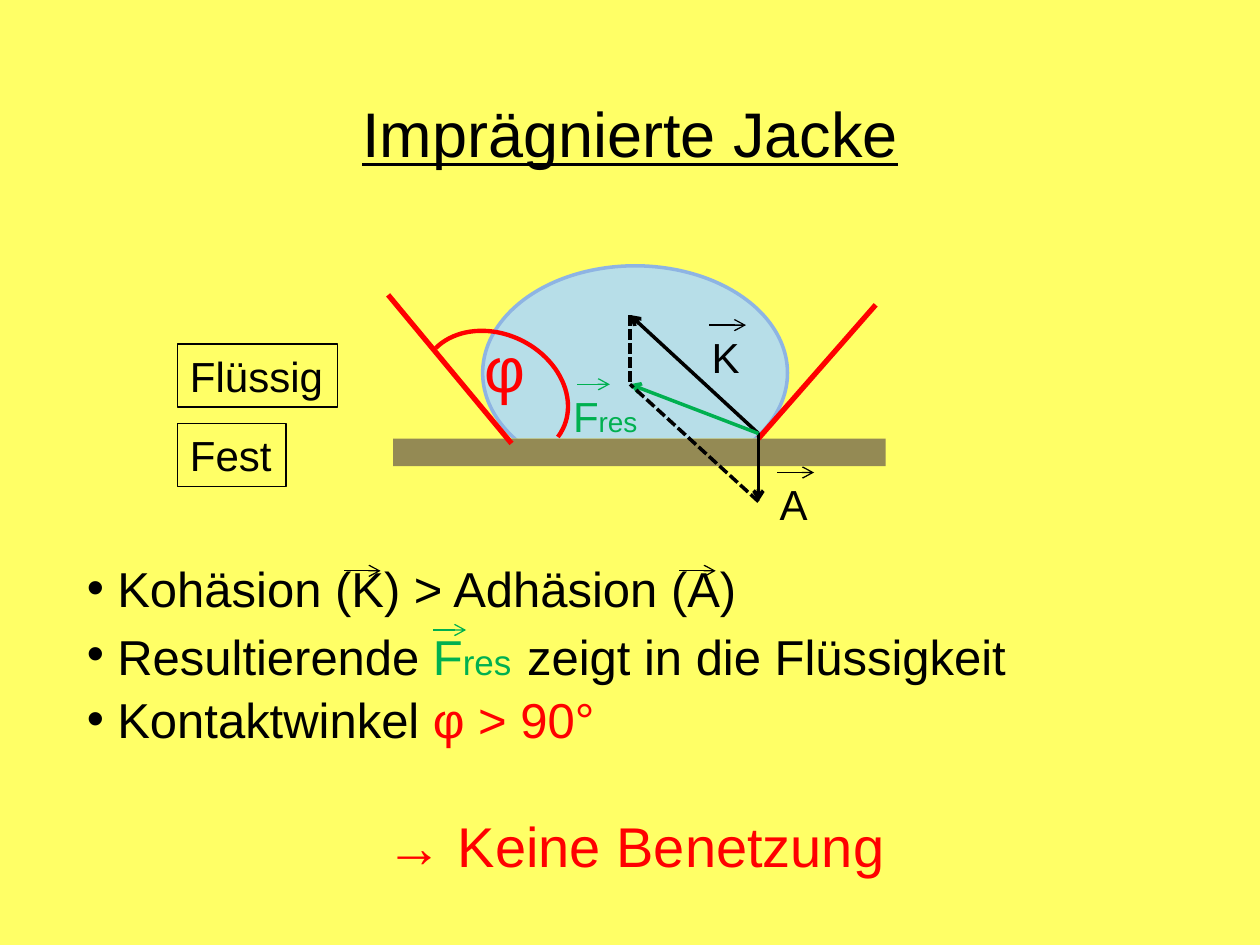
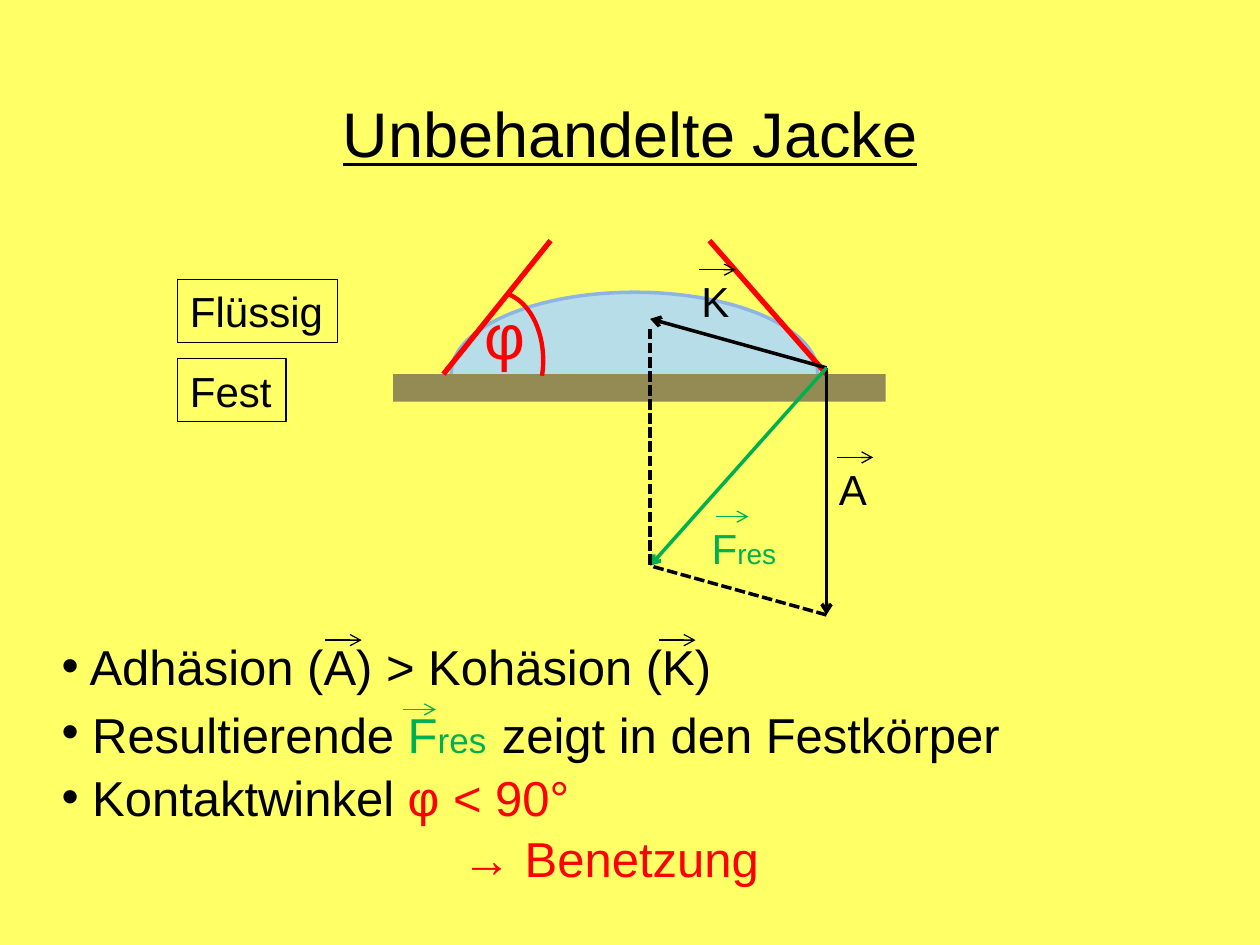
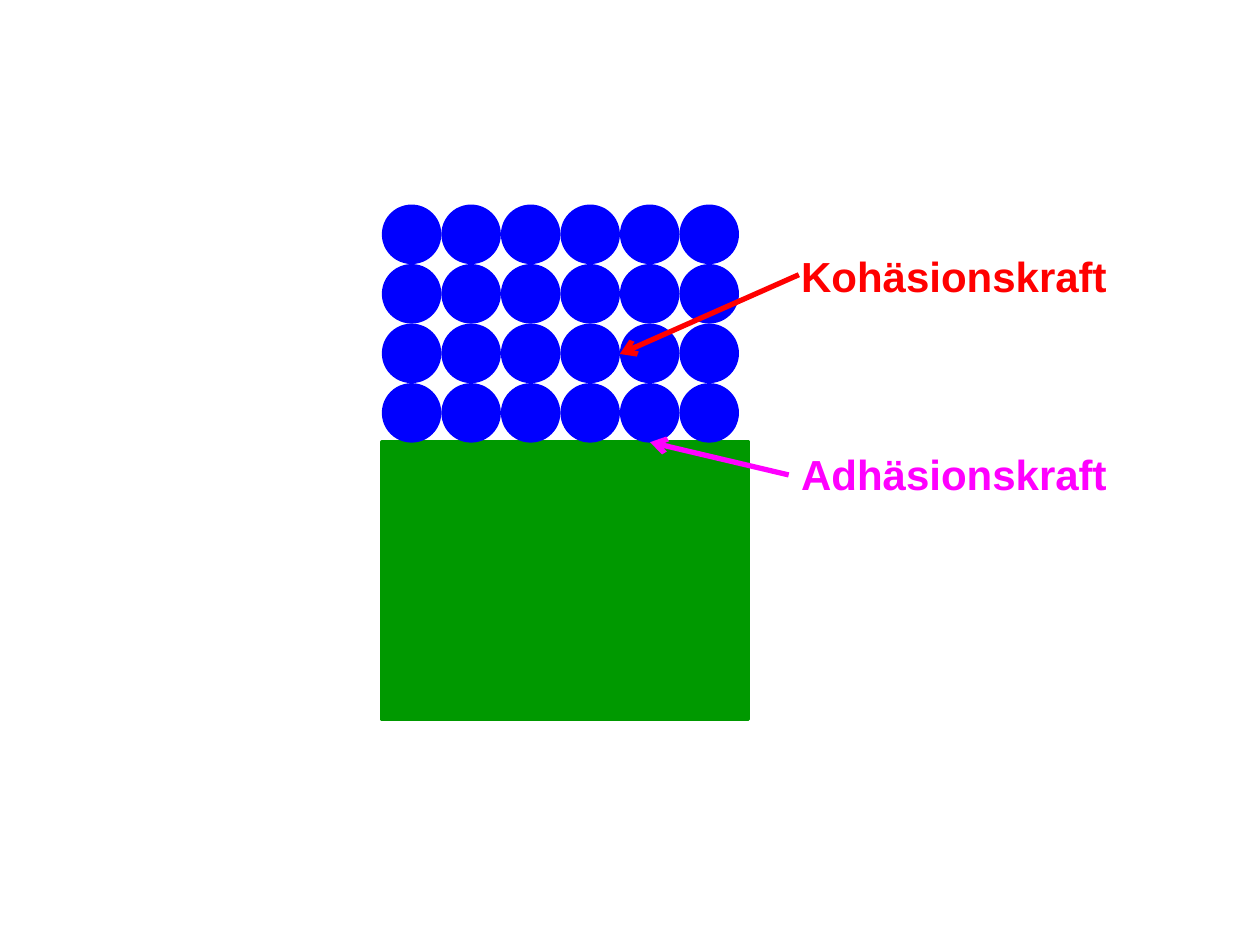
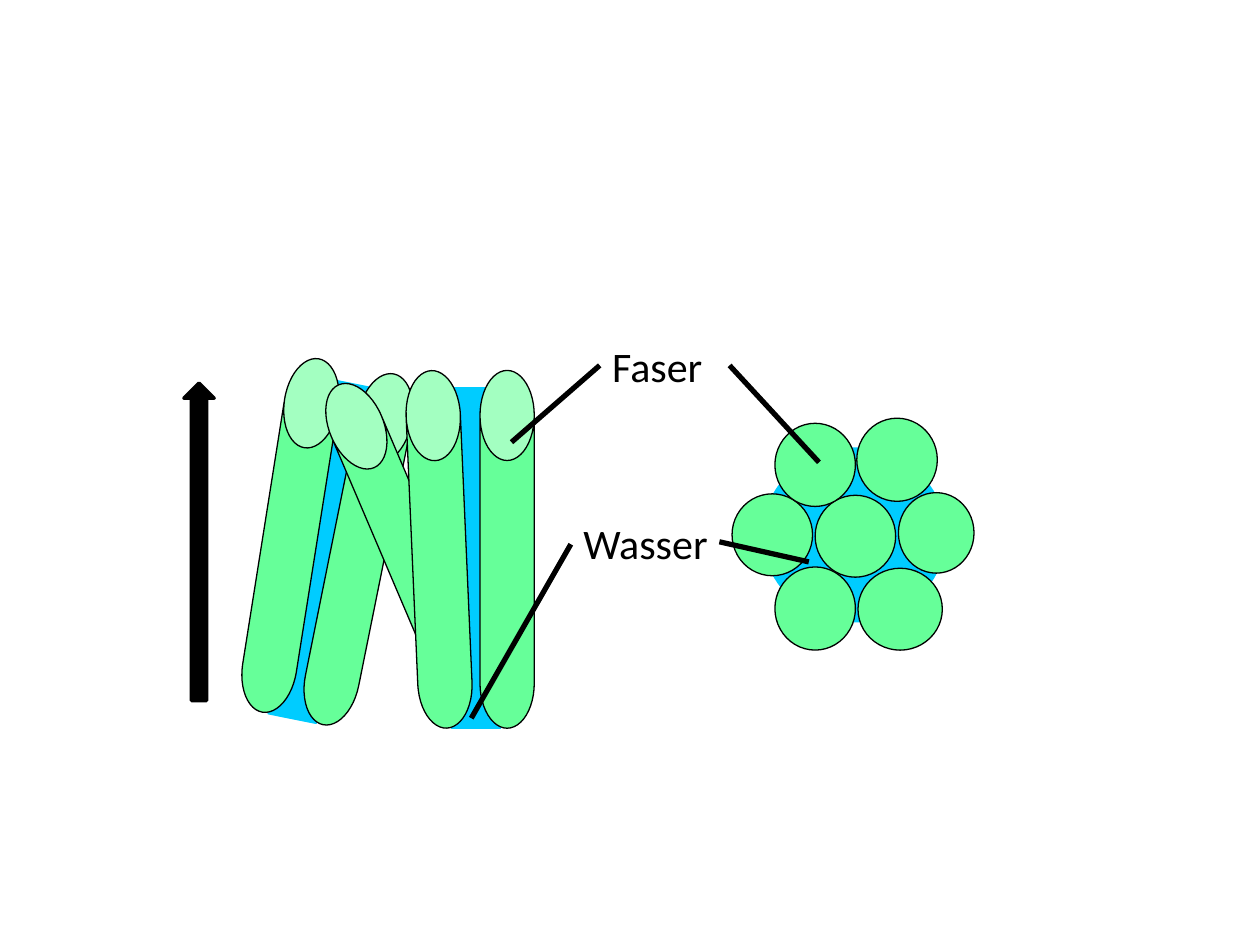
from pptx import Presentation
from pptx.dml.color import RGBColor
from pptx.enum import dml, shapes, text
from pptx.oxml.ns import qn
from pptx.util import Pt
from lxml import etree

YELLOW = RGBColor(0xFF, 0xFF, 0x66)
BLACK = RGBColor(0, 0, 0)
RED = RGBColor(0xFF, 0, 0)
GREEN = RGBColor(0, 0xB0, 0x50)
DROP = RGBColor(0xB7, 0xDE, 0xE8)
RIM = RGBColor(0x8E, 0xB4, 0xE3)
FABRIC = RGBColor(0x94, 0x8A, 0x54)
BLUE = RGBColor(0, 0, 0xFF)
SOLID = RGBColor(0, 0x99, 0)
PINK = RGBColor(0xFF, 0, 0xFF)
FIBRE = RGBColor(0x66, 0xFF, 0x99)
WATER = RGBColor(0, 0xCC, 0xFF)

KIND = shapes.MSO_SHAPE
MID = text.PP_ALIGN.CENTER


def bullets(first, goal, angle):
    return [
        [(first, 28, BLACK)],
        [(" Resultierende", 28, BLACK), (" F", 28, GREEN), ("res", 20, GREEN),
         (" ", 32, GREEN), (f"zeigt in {goal}", 28, BLACK)],
        [(" Kontaktwinkel ", 28, BLACK), (angle, 28, RED)],
    ]


JACKETS = [
    {
        "title": "Imprägnierte Jacke",
        "level": 250.6,
        "drop": (275.8, 151.9, 174.2, 122.4),
        "tangents": [(433.4, 250.6, 500.4, 174.2), (292.3, 253.4, 221.8, 168.5)],
        "arc": (247.7, 182.2, 69.8, 87.1), "turn": 296.4, "sweep": (169.33, 58.24),
        "phi": (270, 185, 39, 51.5),
        "start": (433.4, 247.7),
        "K": (360, 180), "A": (433.4, 286.6), "F": (360, 219.6), "side": 180,
        "tags": {"K": (399.6, 185.8), "A": (438.5, 270), "F": (320.4, 219.6)},
        "body": (42.5, 315.4, 641.5, 186.5),
        "points": bullets(" Kohäsion (K) > Adhäsion (A)", "die Flüssigkeit", "φ > 90°"),
        "result": ("→ Keine Benetzung", 32, RED), "gap": 36,
        "marks": [(196.6, 326.2), (388.1, 326.2)], "fmark": (247.7, 360),
    },
    {
        "title": "Unbehandelte Jacke",
        "level": 213.8,
        "drop": (257.8, 167, 209.5, 92.9),
        "tangents": [(472.3, 213.8, 405.4, 137.5), (253.4, 213.8, 314.6, 137.5)],
        "arc": (257.8, 167, 52.6, 77.8), "turn": 0, "sweep": (168.13, 11.44),
        "phi": (270, 165.6, 39.6, 51.1),
        "start": (472.3, 210.2),
        "K": (371.5, 182.2), "A": (472.3, 351.4), "F": (371.5, 323.3), "side": 187.9,
        "tags": {"K": (393.8, 154.1), "A": (472.3, 261.4), "F": (399.6, 295.2)},
        "body": (28.1, 360, 641.5, 181.4),
        "points": bullets(" Adhäsion (A) > Kohäsion (K)", "den Festkörper", "φ < 90°"),
        "result": ("→ Benetzung", 28, RED), "gap": 1.5,
        "marks": [(185.8, 365.8), (376.6, 365.8)], "fmark": (230.4, 405.4),
    },
]
PHASES = [("Flüssig", -54, 91.4), ("Fest", -8.7, 61.9)]  # text, rise, width

FORCES = [
    ("Kohäsionskraft", RED, 139.7, (456.5, 157, 354.2, 202.3)),
    ("Adhäsionskraft", PINK, 252.7, (450.7, 271.4, 371.5, 252.7)),
]

# Left, top, turn; back to front
RODS = [
    ("water", 172.1, 218.2, 11.4), ("fibre", 189.4, 211.7, 11.4),
    ("fibre", 150.5, 203.8, 9), ("fibre", 218.2, 211.7, 336.9),
    ("water", 257.8, 221.8, 0), ("fibre", 274.3, 211.7, 0),
    ("fibre", 235.4, 211.7, 357.5),
]
ENDS = [
    (465.8, 283, 46, 46.8), (442.8, 324, 46, 47.5), (418.3, 282.2, 46, 46.8),
    (442.8, 241.9, 46, 47.5), (513.4, 281.5, 43.2, 46),
    (490.3, 324.7, 48.2, 46.8), (489.6, 239, 46, 47.5),
]
NAMES = [("Faser", (342.7, 190.8, 73.4, 36)), ("Wasser", (326.2, 292.3, 102.2, 36))]
LEADS = [
    (468, 264.2, 416.9, 208.8), (292.3, 252.7, 342.7, 208.8),
    (269.3, 410.4, 326.2, 311), (462.2, 321.1, 411.1, 309.6),
]


def pts(box):
    return [Pt(n) for n in box]


def shape(slide, kind, box, fill=None, line=None, width=0.75, turn=0, adjust=()):
    item = slide.shapes.add_shape(kind, *pts(box))
    item.shadow.inherit = False
    item.rotation = turn
    for i, n in enumerate(adjust):
        item.adjustments[i] = n
    if fill is None:
        item.fill.background()
    else:
        item.fill.solid()
        item.fill.fore_color.rgb = fill
    if line is None:
        item.line.fill.background()
    else:
        item.line.color.rgb = line
        item.line.width = Pt(width)
    return item


def stroke(slide, ends, color, width, arrow=False, dash=False):
    item = slide.shapes.add_connector(shapes.MSO_CONNECTOR.STRAIGHT, *pts(ends))
    item.line.color.rgb = color
    item.line.width = Pt(width)
    if dash:
        item.line.dash_style = dml.MSO_LINE.SQUARE_DOT
    if arrow:
        tip = etree.SubElement(item.line._get_or_add_ln(), qn("a:tailEnd"))
        tip.set("type", "arrow")
    etree.SubElement(item._element.spPr, qn("a:effectLst"))


def write(para, runs, font="Arial", bold=False, line=False):
    """Fill a paragraph with runs of (text, size, colour)."""
    for words, size, color in runs:
        run = para.add_run()
        run.text = words
        run.font.name = font
        run.font.size = Pt(size)
        run.font.color.rgb = color
        run.font.bold = bold
        run.font.underline = line


def label(slide, box, runs, wrap=True, **style):
    item = slide.shapes.add_textbox(*pts(box))
    item.text_frame.word_wrap = wrap
    item.text_frame.auto_size = text.MSO_AUTO_SIZE.SHAPE_TO_FIT_TEXT
    write(item.text_frame.paragraphs[0], runs, **style)
    return item


def bullet(para):
    props = para._p.get_or_add_pPr()
    props.set("marL", "0")
    props.set("indent", "0")
    etree.SubElement(props, qn("a:buFont")).set("typeface", "Arial")
    etree.SubElement(props, qn("a:buChar")).set("char", "•")


def vector(slide, x, y, color=BLACK):
    """Draw the small arrow that goes above a force's letter."""
    size = 18.7 if color == GREEN else 20.9
    stroke(slide, (x, y, x + size, y), color, 0.75, arrow=True)


def head(slide, words):
    title = slide.shapes.title
    title.left, title.top, title.width, title.height = pts((56.2, 50.4, 607.7, 51.1))
    frame = title.text_frame
    frame.auto_size = text.MSO_AUTO_SIZE.NONE
    frame.vertical_anchor = text.MSO_ANCHOR.TOP
    para = frame.paragraphs[0]
    para.alignment = MID
    write(para, [(words, 36, BLACK)], line=True)


def body(slide, data):
    frame = label(slide, data["body"], data["points"][0]).text_frame
    bullet(frame.paragraphs[0])
    for runs in data["points"][1:]:
        para = frame.add_paragraph()
        para.space_before = Pt(1.5)
        bullet(para)
        write(para, runs)
    para = frame.add_paragraph()
    para.alignment = MID
    para.space_before = Pt(data["gap"])
    write(para, [data["result"]])
    for spot in data["marks"]:
        vector(slide, *spot)
    vector(slide, *data["fmark"], GREEN)


def forces(slide, data):
    start, k, a, f = (data[n] for n in ("start", "K", "A", "F"))
    for tip, color in ((k, BLACK), (a, BLACK), (f, GREEN)):
        stroke(slide, start + tip, color, 2, arrow=True)
    for ends in ((k[0], data["side"]) + f, a + f):
        stroke(slide, ends, BLACK, 2, dash=True)
    for name, (x, y) in data["tags"].items():
        if name == "F":
            label(slide, (x, y, 84.2, 36), [("F", 24, GREEN), ("res", 16, GREEN)])
            vector(slide, x + 9.4, y, GREEN)
        else:
            label(slide, (x, y, 50.4, 36), [(name, 24, BLACK)])
            vector(slide, x + 5.8, y)


def jacket(slide, data):
    level = data["level"]
    head(slide, data["title"])
    shape(slide, KIND.OVAL, data["drop"], DROP, RIM, 2)
    shape(slide, KIND.RECTANGLE, (238.3, level, 235.4, 69.8), YELLOW)
    shape(slide, KIND.RECTANGLE, (224.6, level, 281.5, 15.8), FABRIC)
    for ends in data["tangents"]:
        stroke(slide, ends, RED, 3)
    shape(slide, KIND.ARC, data["arc"], None, RED, 2.5, data["turn"], data["sweep"])
    label(slide, data["phi"], [("φ", 36, RED)])
    body(slide, data)
    forces(slide, data)
    for words, rise, width in PHASES:
        box = label(slide, (101.5, level + rise, width, 36), [(words, 24, BLACK)], wrap=False)
        box.line.color.rgb = BLACK
        box.line.width = Pt(0.75)


def layers(slide):
    shape(slide, KIND.RECTANGLE, (218.2, 252.7, 209.5, 158.4), SOLID, SOLID, 2)
    size = 34.02
    for row in range(4):
        for col in range(6):
            shape(slide, KIND.OVAL, (218.2 + col * size, 116.9 + row * size, size, size), BLUE)
    for words, color, top, ends in FORCES:
        label(slide, (450.7, top, 201.6, 36), [(words, 24, color)], bold=True)
        stroke(slide, ends, color, 3, arrow=True)


def fibres(slide):
    for kind, x, y, turn in RODS:
        if kind == "water":
            shape(slide, KIND.RECTANGLE, (x, y, 28.1, 194.4), WATER, WATER, turn=turn)
        else:
            shape(slide, KIND.CAN, (x, y, 31, 204.5), FIBRE, BLACK, turn=turn, adjust=[1.66])
    shape(slide, KIND.OVAL, (435.6, 255.6, 105.1, 100.1), WATER)
    for box in ENDS:
        shape(slide, KIND.OVAL, box, FIBRE, BLACK)
    for words, box in NAMES:
        label(slide, box, [(words, 24, BLACK)], font="Calibri")
    for ends in LEADS:
        stroke(slide, ends, BLACK, 3)
    shape(slide, KIND.UP_ARROW, (105.1, 218.9, 17.3, 181.4), BLACK, BLACK, 2)


def main():
    deck = Presentation()
    deck.slide_width, deck.slide_height = Pt(720), Pt(540)
    titled, blank = deck.slide_layouts[5], deck.slide_layouts[6]
    for data in JACKETS:
        slide = deck.slides.add_slide(titled)
        slide.background.fill.solid()
        slide.background.fill.fore_color.rgb = YELLOW
        jacket(slide, data)
    for draw in (layers, fibres):
        draw(deck.slides.add_slide(blank))
    deck.save("out.pptx")


if __name__ == "__main__":
    main()
